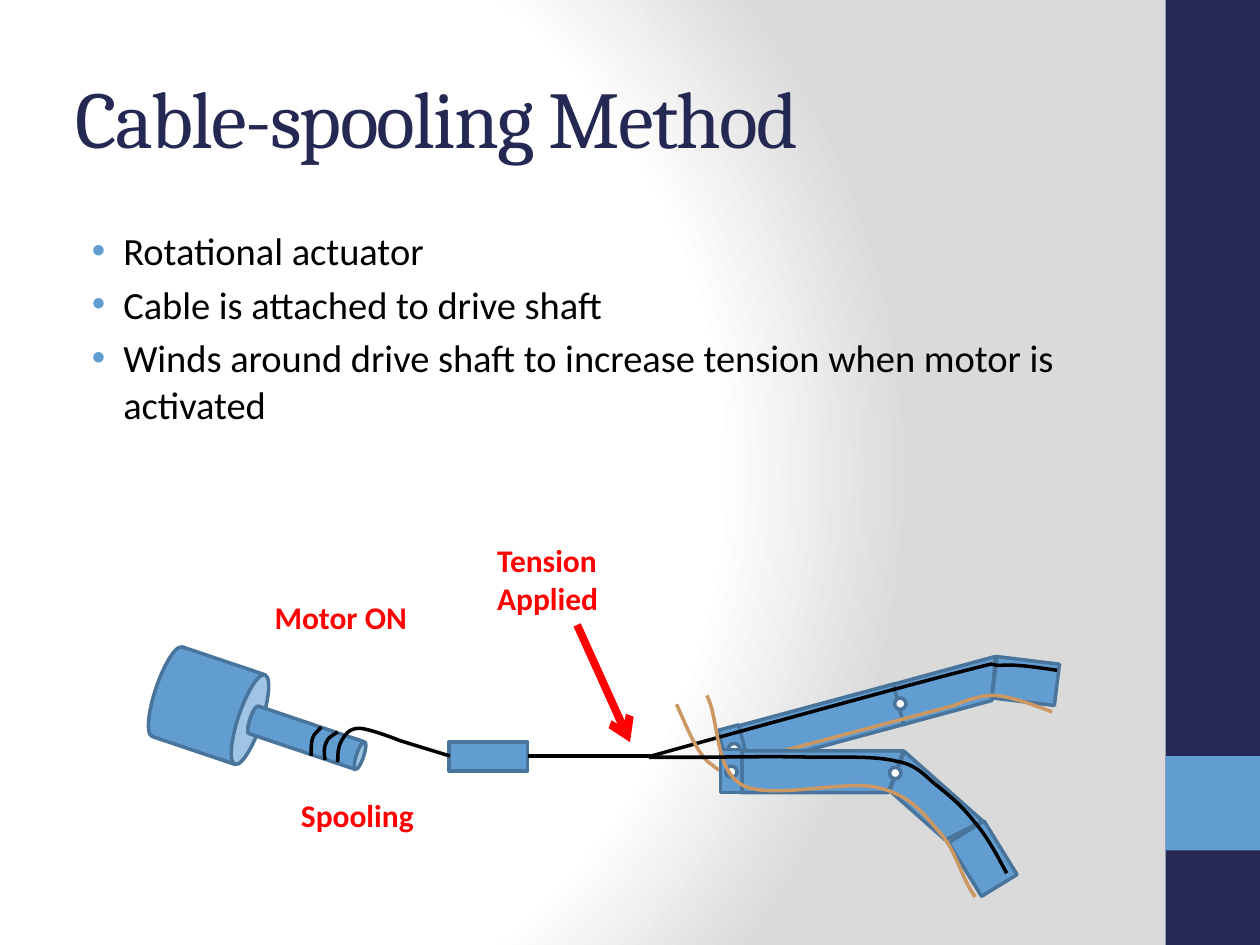
from dataclasses import dataclass
from math import cos, radians, sin

from lxml import etree
from pptx import Presentation
from pptx import util as u
from pptx.dml.color import RGBColor
from pptx.enum import shapes, text
from pptx.oxml import parse_xml
from pptx.oxml.ns import nsdecls, qn

COLORS = {
    "navy": "242852", "blue": "629DD1", "edge": "49749B", "tan": "CB9763",
    "red": "FF0000", "black": "000000", "white": "FFFFFF", "gray": "DADADA",
}
KIND = shapes.MSO_SHAPE
Point = tuple[float, float]


@dataclass
class Block:
    kind: int
    x: float
    y: float
    width: float
    height: float
    angle: float = 0
    fill: str = "blue"
    edge: str | None = "edge"
    adjust: float | None = None


@dataclass
class Plate:
    corners: list[Point]
    angle: float = 0
    center: Point = (0, 0)


@dataclass
class Cable:
    color: str
    start: Point
    segments: list[list[Point]]


@dataclass
class Label:
    words: str
    x: float
    y: float
    width: float
    height: float


def pin(x: float, y: float, angle: float = 0) -> Block:
    return Block(KIND.OVAL, x, y, 6.5, 6.5, angle, "white")


BANDS = [
    Block(KIND.RECTANGLE, 666, 0, 54, 540, 0, "navy", None),
    Block(KIND.RECTANGLE, 666, 432, 54, 54, 0, "blue", None),
]
BULLETS = [
    "Rotational actuator",
    "Cable is attached to drive shaft",
    "Winds around drive shaft to increase tension when motor is activated",
]
LABELS = [
    Label("Motor ON", 149.8, 338.4, 98.6, 28.8),
    Label("Tension Applied", 277, 305.8, 77.8, 51.1),
    Label("Spooling", 164.9, 451.4, 98.6, 28.8),
]
MOTOR = [
    Block(KIND.CAN, 92.2, 371.5, 54, 63.4, 108.6),
    Block(KIND.CAN, 167, 387.4, 16.6, 68.4, 108.6),
    Block(KIND.RECTANGLE, 256.5, 424, 45, 16.6),
]
WINDINGS = [
    Cable("black", (193, 435.6), [
        [(193, 431.3), (193, 427), (195.1, 423.4)],
        [(197.3, 419.8), (199.4, 416.2), (205.2, 416.2)],
        [(211, 416.2), (229, 423.4), (229, 423.4)],
        [(257, 432)]]),
    Cable("black", (185.8, 434.2), [
        [(185, 430.6), (185, 427), (186.5, 424.1)],
        [(187.2, 421.2), (192.2, 419), (193, 418.3)]]),
    Cable("black", (177.8, 432), [
        [(177.8, 428.4), (177.8, 424.1), (178.6, 421.9)],
        [(179.3, 419), (182.9, 416.9), (183.6, 415.4)]]),
]
UPPER_FINGER = [
    Block(KIND.RECTANGLE, 421.9, 402.5, 94.3, 23.8, 344.9),
    Block(KIND.RECTANGLE, 413.3, 415.4, 12.2, 24.5, 344.9),
    pin(416.2, 424.8, 344.9),
    Plate([(569.5, 375.1), (567.4, 400.3), (517, 414), (511.2, 391)],
          164.9, (542.9, 394.6)),
    pin(511.2, 398.9, 344.9),
    Block(KIND.RECTANGLE, 568.1, 377.3, 36, 23.8, 7),
    Cable("black", (604.1, 383), [
        [(593.3, 381.6), (581.8, 379.4), (571.7, 380.2)],
        [(561.6, 380.2), (577.4, 376.6), (543.6, 385.2)],
        [(510.5, 393.8), (400.3, 424.1), (372.2, 432)]]),
    Cable("tan", (601.2, 406.8), [
        [(589.7, 402.5), (578.2, 398.2), (568.8, 397.4)],
        [(559.4, 396.7), (545, 403.2), (545, 403.2)],
        [(431.3, 433.4)],
        [(408.2, 439.2), (414, 442.8), (406.8, 437)],
        [(398.9, 432), (393.1, 416.9), (386.6, 402.5)]]),
]
LOWER_FINGER = [
    Plate([(423.4, 429.1), (516.2, 429.1), (507.6, 452.9), (423.4, 452.9)]),
    Block(KIND.RECTANGLE, 543.6, 478.8, 36, 23.8, 58.4),
    Block(KIND.TRAPEZOID, 501.8, 446.4, 59.8, 22.3, 221.6, adjust=0.39),
    Block(KIND.RECTANGLE, 411.8, 428.4, 12.2, 24.5),
    pin(414.7, 437.8),
    pin(508.3, 438.5),
    Cable("tan", (557.3, 512.6), [
        [(548.6, 500.4), (546.5, 486), (537.1, 475.9)],
        [(527.8, 465.1), (520.6, 454.3), (501.1, 450)],
        [(482.4, 445.7), (440.6, 457.2), (424.1, 448.6)],
        [(408.2, 439.9), (411.1, 411.1), (403.9, 397.4)]]),
    Cable("black", (575.3, 499), [
        [(569.5, 488.2), (563.8, 477.4), (556.6, 469.4)],
        [(550.1, 460.8), (542.2, 454.3), (535, 448.6)],
        [(527.8, 442.8), (524.2, 437), (511.9, 434.9)],
        [(500.4, 432), (482.4, 432.7), (464.4, 432.7)],
        [(446.4, 432), (404.6, 432.7), (404.6, 432.7)],
        [(370.8, 432.7)]]),
]


def rgb(name: str) -> RGBColor:
    return RGBColor.from_string(COLORS[name])


def paint(shape, fill: str | None, edge: str | None) -> None:
    shape.shadow.inherit = False
    for target, color in ((shape.fill, fill), (shape.line.fill, edge)):
        if color is None:
            target.background()
        else:
            target.solid()
            target.fore_color.rgb = rgb(color)
    if edge:
        shape.line.width = u.Pt(2)


def draw_block(canvas, block: Block) -> None:
    shape = canvas.add_shape(block.kind, u.Pt(block.x), u.Pt(block.y),
                             u.Pt(block.width), u.Pt(block.height))
    shape.rotation = block.angle
    if block.adjust is not None:
        shape.adjustments[0] = block.adjust
    paint(shape, block.fill, block.edge)


def draw_outline(canvas, points: list[Point], close: bool):
    scaled = [(u.Pt(x), u.Pt(y)) for x, y in points]
    builder = canvas.build_freeform(*scaled[0], scale=1.0)
    builder.add_line_segments(scaled[1:], close=close)
    return builder.convert_to_shape()


def turn(point: Point, center: Point, angle: float) -> Point:
    dx, dy = point[0] - center[0], point[1] - center[1]
    c, s = cos(radians(angle)), sin(radians(angle))
    return center[0] + dx * c - dy * s, center[1] + dx * s + dy * c


def draw_plate(canvas, plate: Plate) -> None:
    corners = [turn(corner, plate.center, -plate.angle) for corner in plate.corners]
    shape = draw_outline(canvas, corners, True)
    shape.rotation = plate.angle
    paint(shape, "blue", "edge")


def draw_cable(canvas, cable: Cable) -> None:
    ends = [cable.start] + [segment[-1] for segment in cable.segments]
    shape = draw_outline(canvas, ends, False)
    steps = shape._element.xpath(".//a:lnTo")
    for step, segment in zip(steps, cable.segments):
        if len(segment) == 3:
            step.tag = qn("a:cubicBezTo")
            for index, (x, y) in enumerate(segment[:2]):
                step.insert(index, etree.Element(
                    qn("a:pt"), x=str(u.Pt(x) - shape.left), y=str(u.Pt(y) - shape.top)))
    paint(shape, None, cable.color)


def draw_parts(canvas, parts: list[Block | Plate | Cable]) -> None:
    painters = {Block: draw_block, Plate: draw_plate, Cable: draw_cable}
    for part in parts:
        painters[type(part)](canvas, part)


def draw_line(canvas, start: Point, end: Point, color: str, width: float, arrow: bool = False) -> None:
    line = canvas.add_connector(shapes.MSO_CONNECTOR.STRAIGHT,
                                *(u.Pt(value) for value in start + end))
    line.line.color.rgb = rgb(color)
    line.line.width = u.Pt(width)
    if arrow:
        etree.SubElement(line.line._get_or_add_ln(), qn("a:tailEnd"), type="arrow")
    etree.SubElement(line._element.spPr, qn("a:effectLst"))


def add_frame(canvas, x: float, y: float, width: float, height: float):
    box = canvas.add_textbox(u.Pt(x), u.Pt(y), u.Pt(width), u.Pt(height))
    box.text_frame.word_wrap = True
    return box.text_frame


def add_span(para, words: str, font: str, size: float, color: str, bold: bool = False):
    span = para.add_run()
    span.text = words
    span.font.name, span.font.size, span.font.bold = font, u.Pt(size), bold
    span.font.color.rgb = rgb(color)
    return span


def draw_text(canvas) -> None:
    title = add_frame(canvas, 36, 21.6, 600, 90)
    title.vertical_anchor = text.MSO_ANCHOR.MIDDLE
    span = add_span(title.paragraphs[0], "Cable-spooling Method", "Cambria", 46, "navy")
    span.font._element.set("spc", "-100")

    body = add_frame(canvas, 36, 126, 600, 378)
    for index, words in enumerate(BULLETS):
        para = body.add_paragraph() if index else body.paragraphs[0]
        props = para._p.get_or_add_pPr()
        props.set("marL", str(u.Pt(27.36)))
        props.set("indent", str(u.Pt(-18)))
        etree.SubElement(etree.SubElement(props, qn("a:spcBef")), qn("a:spcPct"), val="20000")
        etree.SubElement(etree.SubElement(props, qn("a:buClr")), qn("a:srgbClr"), val=COLORS["blue"])
        etree.SubElement(props, qn("a:buFont"), typeface="Arial")
        etree.SubElement(props, qn("a:buChar"), char="•")
        add_span(para, words, "Calibri", 22, "black")

    for label in LABELS:
        frame = add_frame(canvas, label.x, label.y, label.width, label.height)
        frame.auto_size = text.MSO_AUTO_SIZE.SHAPE_TO_FIT_TEXT
        add_span(frame.paragraphs[0], label.words, "Calibri", 18, "red", True)


def set_background(page) -> None:
    page.background.fill.gradient()
    old = page.element.xpath(".//p:bgPr/a:gradFill")[0]
    stops = "".join(f'<a:gs pos="{spot}000"><a:srgbClr val="{COLORS[name]}"/></a:gs>'
                    for spot, name in ((0, "white"), (75, "white"), (100, "gray")))
    old.getparent().replace(old, parse_xml(
        f'<a:gradFill {nsdecls("a")} rotWithShape="1"><a:gsLst>{stops}</a:gsLst>'
        '<a:path path="circle"><a:fillToRect l="20000" t="50000" r="100000" b="50000"/>'
        '</a:path></a:gradFill>'))


def main() -> None:
    deck = Presentation()
    deck.slide_width, deck.slide_height = u.Pt(720), u.Pt(540)
    page = deck.slides.add_slide(deck.slide_layouts[6])
    set_background(page)
    draw_parts(page.shapes, BANDS)
    draw_text(page.shapes)
    draw_line(page.shapes, (329.8, 357.1), (360, 424.1), "red", 4.5, True)
    draw_parts(page.shapes, MOTOR)
    draw_line(page.shapes, (301.7, 432), (372.2, 432), "black", 2)
    draw_parts(page.shapes, WINDINGS)
    for finger in (UPPER_FINGER, LOWER_FINGER):
        draw_parts(page.shapes.add_group_shape().shapes, finger)
    deck.save("out.pptx")


if __name__ == "__main__":
    main()
